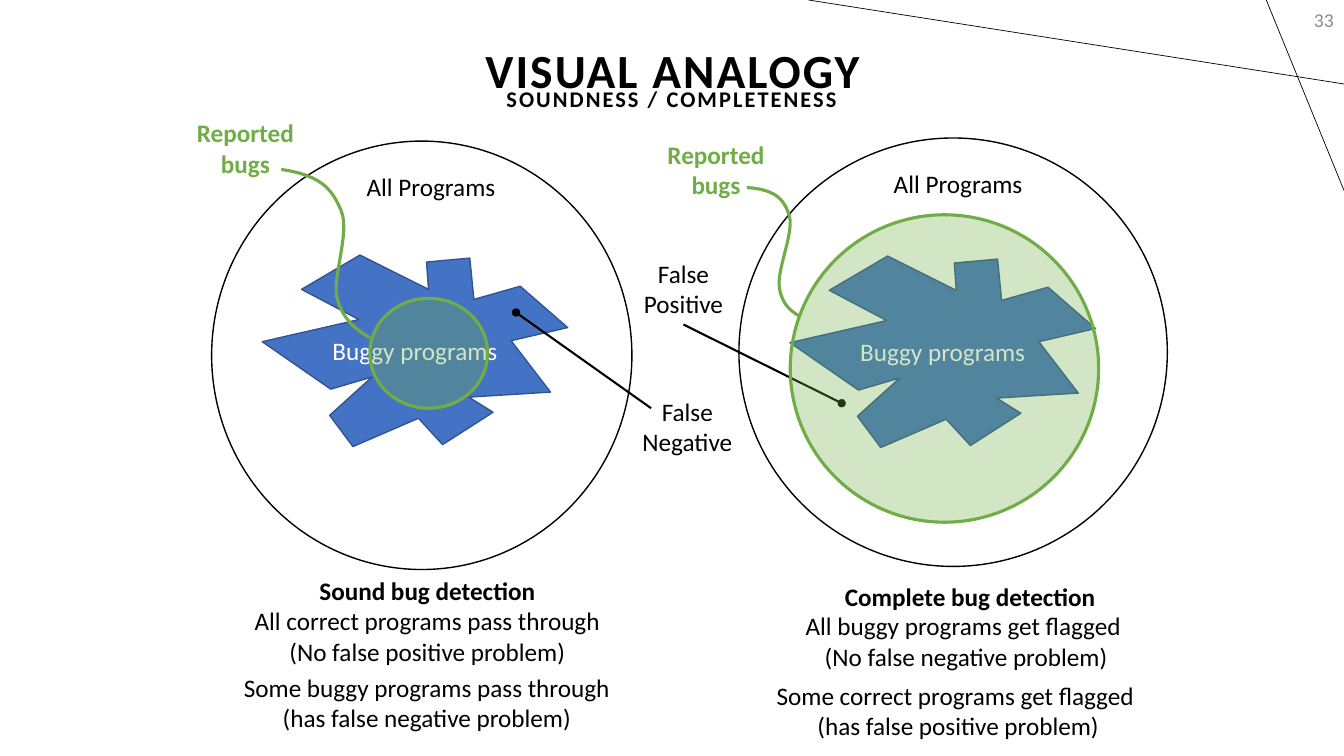
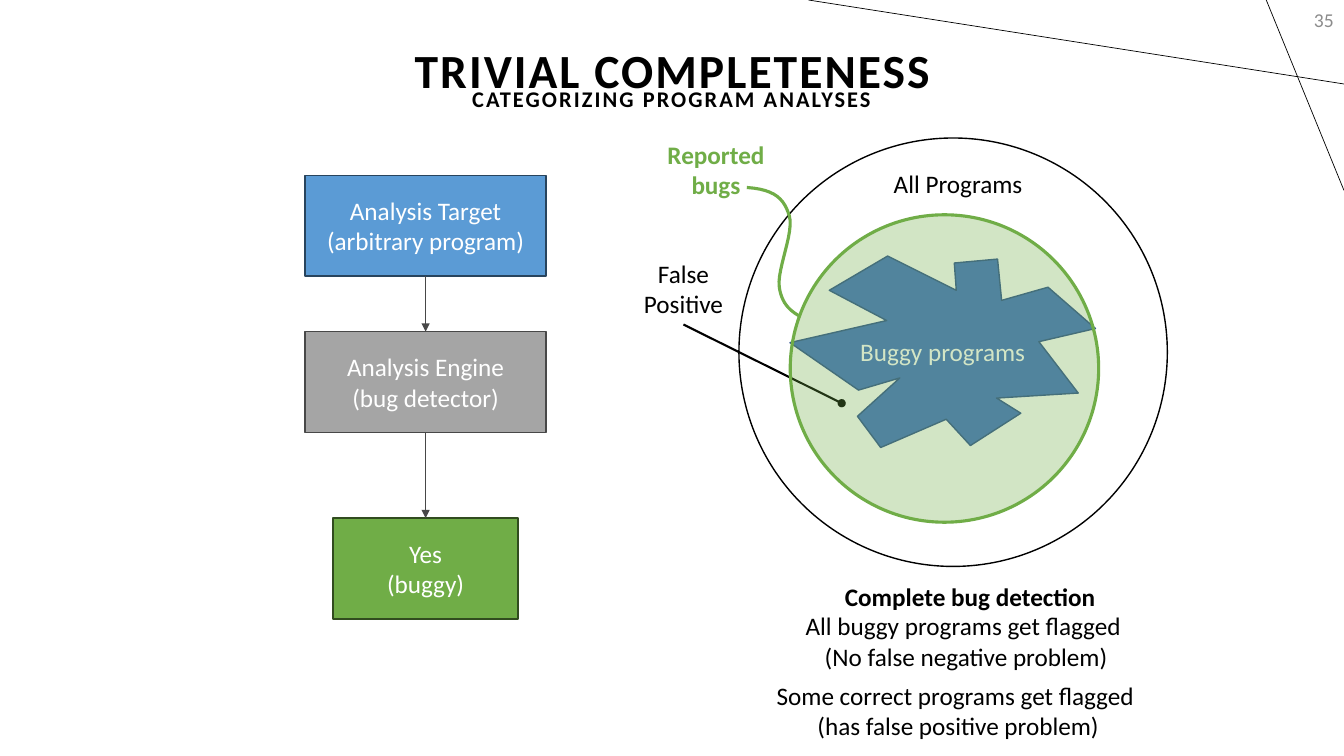
from itertools import pairwise

from lxml import etree
from pptx import Presentation
from pptx.dml.color import RGBColor
from pptx.enum.shapes import MSO_CONNECTOR, MSO_SHAPE
from pptx.enum.text import MSO_ANCHOR, MSO_AUTO_SIZE, PP_ALIGN
from pptx.oxml.ns import qn
from pptx.util import Pt

STRAIGHT = MSO_CONNECTOR.STRAIGHT
OVAL, RECTANGLE = MSO_SHAPE.OVAL, MSO_SHAPE.RECTANGLE
MIDDLE, TOP = MSO_ANCHOR.MIDDLE, MSO_ANCHOR.TOP
FIT, NO_FIT = MSO_AUTO_SIZE.SHAPE_TO_FIT_TEXT, MSO_AUTO_SIZE.NONE
CENTER, RIGHT = PP_ALIGN.CENTER, PP_ALIGN.RIGHT

COLORS = {
    "black": "000000", "white": "FFFFFF", "number": "8C8C8C",
    "blob": "4472C4", "blob_edge": "325491", "green": "70AD47",
    "green_edge": "314C1F", "blue": "5B9BD5", "blue_edge": "28445D",
    "gray": "A5A5A5", "gray_edge": "484848",
}

# Formats: font values plus the frame settings of each kind of text
BASE = {"name": "Calibri", "size": Pt(18), "bold": False}
HEADING = BASE | {"size": Pt(34), "bold": True}
SUBHEADING = HEADING | {"size": Pt(16)}
BOLD = BASE | {"bold": True}
FIXED = {"word_wrap": True, "auto_size": NO_FIT, "vertical_anchor": MIDDLE}
GROWING = {"word_wrap": False, "auto_size": FIT, "vertical_anchor": TOP}

# Header
HEADER_LINES = [((960, 60), (577.5, 0)), ((904.5, 0), (960, 136))]
TITLE_AREA = (1.4, 0, 958.3, 104.4)
SUBTITLE_AREA = (0.7, 19.4, 958.3, 104.4)
NUMBER_AREA = (743.8, 0, 216, 28.8)

# Jagged outline of the buggy programs, relative to its top left corner
BLOB = [
    (118.8, 24.5), (69.8, 0), (28.1, 24.5), (69.1, 46.1), (0, 61.9),
    (49, 95.8), (78.5, 87.1), (48.2, 114.5), (64.8, 136.8), (111.6, 116.6),
    (128.9, 135.4), (164.9, 112.3), (147.6, 101.5), (205.9, 97.9),
    (177.8, 61.2), (218.2, 51.8), (184.3, 22.3), (151.2, 31.7),
    (148.3, 2.2), (117.4, 5),
]
CURVE_STEPS = 12

# Diagrams: labels are lines, area, colour and format
SOUND = {
    "circle": (151.2, 100.8, 300.2, 306),
    "labels": [
        (["All Programs"], (254.2, 118.8, 107.3, 28.8), "black", BASE),
        (["Reported", "bugs"], (133.2, 80.6, 84.2, 51.1), "green", BOLD),
        (["False", "Negative"], (451.4, 279.4, 79.2, 51.1), "black", BASE),
        (["Sound bug detection"], (220.3, 407.5, 169.9, 28.8), "black", BOLD),
        (["All correct programs pass through", "(No false positive problem)"],
         (173.5, 429.1, 263.5, 51.1), "black", BASE),
        (["Some buggy programs pass through", "(has false negative problem)"],
         (165.6, 476.6, 278.6, 51.1), "black", BASE),
    ],
    "blob": (187.3, 182.2),
    "pointer": ((465.1, 291.6), (368.6, 223.2)),
    "curve": [(200.9, 121), (229, 125.3), (236.9, 134.6), (243.4, 149.8),
              (250.6, 164.9), (237.6, 196.6), (240.5, 211.7),
              (244.1, 226.8), (252.7, 234.7), (264.2, 241.2)],
    "reported": (264.2, 213.1, 84.2, 78.5),
}
COMPLETE = {
    "circle": (527.8, 98.6, 306, 306),
    "labels": [
        (["All Programs"], (630.7, 116.6, 107.3, 28.8), "black", BASE),
        (["Reported", "bugs"], (469.4, 95.8, 84.2, 51.1), "green", BOLD),
        (["False", "Positive"], (452.2, 180.7, 72, 51.1), "black", BASE),
        (["Complete bug detection"], (594, 411.8, 198, 28.8), "black", BOLD),
        (["All buggy programs get flagged ", "(No false negative problem)"],
         (566.6, 432.7, 247, 51.1), "black", BASE),
        (["Some correct programs get flagged ", "(has false positive problem)"],
         (545.8, 482.4, 277.2, 51.1), "black", BASE),
    ],
    "blob": (564.3, 182.9),
    "pointer": ((488.2, 231.8), (601.2, 288)),
    "curve": [(533.5, 133.9), (554.4, 135.4), (560.2, 142.6), (563.8, 154.1),
              (567.4, 165.6), (555.1, 192.2), (556.6, 204.5),
              (558, 216), (563.8, 221.8), (571.7, 226.1)],
    "reported": (564.5, 153.4, 220.3, 219.6),
}

# Flow chart: lines, top, width and colour
FLOW_CENTER, FLOW_HEIGHT = 304, 72
FLOW = [
    (["Analysis Target", "(arbitrary program)"], 125.3, 172, "blue"),
    (["Analysis Engine", "(bug detector)"], 236.9, 172, "gray"),
    (["Yes", "(buggy)"], 370.1, 132, "green"),
]

PAGES = [
    ("33", "VISUAL ANALOGY", "SOUNDNESS / COMPLETENESS", [SOUND, COMPLETE], []),
    ("35", "TRIVIAL COMPLETENESS", "CATEGORIZING PROGRAM ANALYSES", [COMPLETE], FLOW),
]


def write(box, lines, color, font, frame=FIXED, align=CENTER, line_spacing=1.0, tracking=0):
    for name, value in frame.items():
        setattr(box.text_frame, name, value)
    box.text_frame.text = "\n".join(lines)
    for para in box.text_frame.paragraphs:
        para.alignment, para.line_spacing = align, line_spacing
        for span in para.runs:
            for name, value in font.items():
                setattr(span.font, name, value)
            span.font.color.rgb = RGBColor.from_string(COLORS[color])
            if tracking:
                span.font._element.set("spc", str(tracking))


def style(shape, line, width, fill=None, opacity=None, tail=None):
    if fill:
        shape.fill.solid()
        shape.fill.fore_color.rgb = RGBColor.from_string(COLORS[fill])
    elif hasattr(shape, "fill"):
        shape.fill.background()
    properties = shape.element.spPr
    if opacity:
        color = properties.find(qn("a:solidFill")).find(qn("a:srgbClr"))
        etree.SubElement(color, qn("a:alpha"), val=str(opacity * 1000))
    shape.line.width = Pt(width)
    shape.line.color.rgb = RGBColor.from_string(COLORS[line])
    if tail:
        etree.SubElement(properties.find(qn("a:ln")), qn("a:tailEnd"), type=tail)
    etree.SubElement(properties, qn("a:effectLst"))


deck = Presentation()
deck.slide_width, deck.slide_height = Pt(960), Pt(540)

for number, title, subtitle, diagrams, flow in PAGES:
    page = deck.slides.add_slide(deck.slide_layouts[5])
    shapes = page.shapes

    # Corner lines, title, page number and subtitle
    for start, end in HEADER_LINES:
        style(shapes.add_connector(STRAIGHT, *map(Pt, start + end)), "black", 0.5)
    heading = shapes.title
    for name, value in zip(("left", "top", "width", "height"), TITLE_AREA):
        setattr(heading, name, Pt(value))
    write(heading, [title], "black", HEADING, line_spacing=0.9, tracking=150)
    write(shapes.add_textbox(*map(Pt, NUMBER_AREA)), [number], "number",
          BASE | {"size": Pt(14)}, align=RIGHT)
    write(shapes.add_textbox(*map(Pt, SUBTITLE_AREA)), [subtitle], "black",
          SUBHEADING, line_spacing=0.9, tracking=150)

    # Flow chart boxes, then the arrows between them
    for lines, top, width, color in flow:
        box = shapes.add_shape(RECTANGLE, Pt(FLOW_CENTER - width / 2), Pt(top),
                               Pt(width), Pt(FLOW_HEIGHT))
        style(box, color + "_edge", 1, color)
        write(box, lines, "white", BASE)
    for upper, lower in pairwise(flow):
        arrow = shapes.add_connector(STRAIGHT, Pt(FLOW_CENTER), Pt(upper[1] + FLOW_HEIGHT),
                                     Pt(FLOW_CENTER), Pt(lower[1]))
        style(arrow, "gray_edge", 1, tail="triangle")

    for diagram in diagrams:
        # All programs and the labels
        style(shapes.add_shape(OVAL, *map(Pt, diagram["circle"])), "black", 1, "white")
        for lines, area, color, font in diagram["labels"]:
            write(shapes.add_textbox(*map(Pt, area)), lines, color, font, GROWING)

        # Buggy programs
        left, top = diagram["blob"]
        corners = [(Pt(left + x), Pt(top + y)) for x, y in BLOB]
        builder = shapes.build_freeform(*corners[0])
        builder.add_line_segments(corners[1:], close=True)
        blob = builder.convert_to_shape()
        style(blob, "blob_edge", 1, "blob")
        write(blob, ["Buggy programs"], "white", BASE)

        # Pointer to the wrong verdict
        start, end = diagram["pointer"]
        pointer = shapes.add_connector(STRAIGHT, *map(Pt, start + end))
        style(pointer, "black", 1.5, tail="oval")

        # Curved leader, traced along its cubic segments
        knots = diagram["curve"]
        trace = []
        for first in range(0, len(knots) - 1, 3):
            for step in range(1, CURVE_STEPS + 1):
                t = step / CURVE_STEPS
                weights = ((1 - t) ** 3, 3 * t * (1 - t) ** 2, 3 * t * t * (1 - t), t ** 3)
                trace.append([Pt(sum(w * knot[axis] for w, knot in
                                     zip(weights, knots[first:first + 4])))
                              for axis in (0, 1)])
        builder = shapes.build_freeform(*map(Pt, knots[0]))
        builder.add_line_segments(trace, close=False)
        style(builder.convert_to_shape(), "green", 2.25)

        # Reported bugs
        reported = shapes.add_shape(OVAL, *map(Pt, diagram["reported"]))
        style(reported, "green", 2.25, "green", opacity=31)

deck.save("out.pptx")
